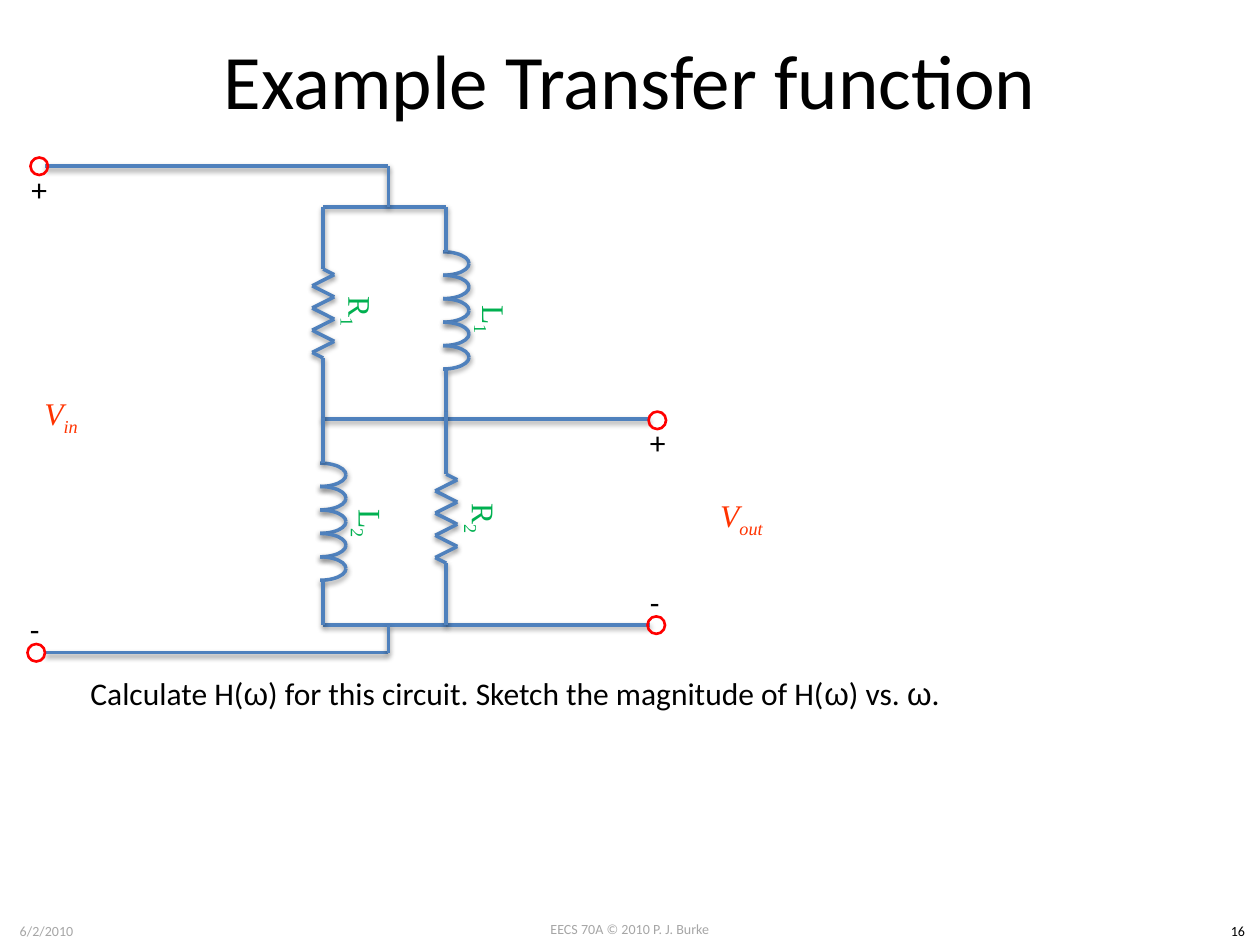
from itertools import pairwise

from lxml.etree import SubElement
from pptx import Presentation
from pptx.dml.color import RGBColor
from pptx.enum.shapes import MSO_CONNECTOR, MSO_SHAPE
from pptx.enum.text import MSO_ANCHOR, PP_ALIGN
from pptx.oxml.ns import qn
from pptx.util import Pt

WIRE, TERMINAL, VOLTAGE, PART = "4F81BD", "FF0000", "FF3300", "00B050"
BLACK, GRAY = "000000", "A6A6A6"
SANS, SERIF, GREEK = "Calibri", "Times New Roman", "Arial"


def rgb(color):
    return RGBColor.from_string(color)


def add_shadow(shape):
    effects = SubElement(shape._element.spPr, qn("a:effectLst"))
    shadow = SubElement(effects, qn("a:outerShdw"), blurRad=str(Pt(3.1)),
                        dist=str(Pt(1.6)), dir="5400000", rotWithShape="0")
    color = SubElement(shadow, qn("a:srgbClr"), val=BLACK)
    SubElement(color, qn("a:alpha"), val="38000")


class Circuit:
    """Draws circuit elements and text on one slide, in points."""

    def __init__(self, slide):
        self.s = slide

    def run(self, p, text, size, color, font=SANS):
        r = p.add_run()
        r.text = text
        r.font.name, r.font.size = font, Pt(size)
        r.font.color.rgb = rgb(color)
        return r

    def title(self, text, left, top, width, height):
        sp = self.s.shapes.title
        sp.left, sp.top, sp.width, sp.height = map(Pt, (left, top, width, height))
        tf = sp.text_frame
        tf.vertical_anchor = MSO_ANCHOR.MIDDLE
        p = tf.paragraphs[0]
        p.alignment = PP_ALIGN.CENTER
        self.run(p, text, 44, BLACK)

    def box(self, left, top, width, height, align=PP_ALIGN.LEFT, wrap=True):
        sp = self.s.shapes.add_textbox(*map(Pt, (left, top, width, height)))
        tf = sp.text_frame
        tf.word_wrap = wrap
        tf.paragraphs[0].alignment = align
        return sp, tf.paragraphs[0]

    def footer(self, text, left, top, width, color=GRAY):
        sp, p = self.box(left, top, width, 17, PP_ALIGN.CENTER)
        self.run(p, text, 8, color)

    def sign(self, text, left, top, width):
        sp, p = self.box(left, top, width, 29, wrap=False)
        self.run(p, text, 18, BLACK)

    def symbol(self, name, index, left, top, width, height, color):
        """A letter with a subscript, centred in its box."""
        sp, p = self.box(left, top, width, height, PP_ALIGN.CENTER)
        sp.text_frame.vertical_anchor = MSO_ANCHOR.MIDDLE
        runs = [self.run(p, text, 18, color, SERIF) for text in (name, index)]
        runs[1].font._element.set("baseline", "-25000")
        return sp, runs

    def voltage(self, index, left, top):
        sp, runs = self.symbol("V", index, left, top, 55.4, 44, VOLTAGE)
        for r in runs:
            r.font.italic = True

    def part_label(self, name, index, left, top):
        sp, runs = self.symbol(name, index, left, top, 85.7, 52.6, PART)
        sp.rotation = 90

    def wire(self, start, end, shapes=None):
        shapes = shapes or self.s.shapes
        line = shapes.add_connector(MSO_CONNECTOR.STRAIGHT,
                                    *map(Pt, (*start, *end)))
        line.line.color.rgb = rgb(WIRE)
        line.line.width = Pt(2)
        add_shadow(line)

    def terminal(self, left, top):
        sp = self.s.shapes.add_shape(MSO_SHAPE.OVAL, *map(Pt, (left, top, 10, 10)))
        sp.fill.background()
        sp.line.color.rgb = rgb(TERMINAL)
        sp.line.width = Pt(1.5)
        sp.shadow.inherit = False

    def resistor(self, x, top):
        """Vertical zigzag between two leads of equal length."""
        shapes = self.s.shapes.add_group_shape().shapes
        lead, half, step = 35.5, 6.3, 6.35
        start = top + lead
        end = start + 8 * step
        teeth = [(x + half * (-1) ** i, start + step * (i + 0.5)) for i in range(8)]
        points = [(x, top), (x, start), *teeth, (x, end), (x, end + lead)]
        for a, b in pairwise(points):
            self.wire(a, b, shapes)

    def inductor(self, x, top):
        """Vertical coil of half-ellipses between two leads of equal length."""
        shapes = self.s.shapes.add_group_shape().shapes
        lead, pitch, turns = 25.6, 13.4, 5
        start = top + lead
        end = start + turns * pitch
        self.wire((x, top), (x, start), shapes)
        for i in range(turns):
            for flipped in (False, True):
                arc = shapes.add_shape(MSO_SHAPE.ARC, *map(
                    Pt, (x - 16.5, start + i * pitch, 29.5, pitch)))
                if flipped:
                    arc._element.spPr.xfrm.set("flipV", "1")
                arc.fill.background()
                arc.line.color.rgb = rgb(WIRE)
                arc.line.width = Pt(2)
                add_shadow(arc)
        self.wire((x, end), (x, end + lead), shapes)


def main():
    prs = Presentation()
    prs.slide_width, prs.slide_height = Pt(720), Pt(540)
    c = Circuit(prs.slides.add_slide(prs.slide_layouts[5]))

    c.footer("EECS 70A © 2010 P. J. Burke", 276, 522.7, 168)
    c.footer("6/2/2010", 0, 523.4, 53.3)
    c.footer("16", 694.8, 523.4, 25.2, BLACK)
    c.title("Example Transfer function", 36, 0, 648, 90)

    sp, p = c.box(44.6, 381.6, 578, 29)
    for text, font in (("Calculate H(", SANS), ("ω", GREEK),
                       (") for this circuit. Sketch the magnitude of H(", SANS),
                       ("ω", GREEK), (") vs. ", SANS), ("ω", GREEK), (".", SANS)):
        c.run(p, text, 18, BLACK, font)

    left, middle, right = 184.7, 222, 255
    input_top, top, center, bottom, input_bottom = 95, 118.3, 239.5, 357, 373
    input_x, output_x = 26, 371.5

    for start, end in (
        ((middle, input_top), (input_x, input_top)),
        ((middle, input_bottom), (input_x, input_bottom)),
        ((right, center), (output_x, center)),
        ((right, bottom), (output_x, bottom)),
        ((left, top), (right, top)),
        ((left, center), (right, center)),
        ((left, bottom), (right, bottom)),
        ((middle, top), (middle, input_top)),
        ((middle, bottom), (middle, input_bottom)),
    ):
        c.wire(start, end)

    c.resistor(left, top)
    c.inductor(right, top)
    c.inductor(left, center - 0.5)
    c.resistor(right, center - 4)

    for x, y in ((17.4, 90), (15.7, 368), (370.6, 235.2), (370, 352.2)):
        c.terminal(x, y)
    for text, x, y, width in (("+", 10.8, 93.6, 23.8), ("-", 10, 345, 20.2),
                              ("+", 364.3, 238.3, 23.8), ("-", 364.3, 329.8, 20.2)):
        c.sign(text, x, y, width)

    c.voltage("in", 7.2, 215.3)
    c.voltage("out", 396, 273.8)
    for name, index, x, y in (("R", "1", 162, 152), ("L", "1", 238.3, 156.2),
                              ("R", "2", 232.5, 270), ("L", "2", 167.8, 273)):
        c.part_label(name, index, x, y)

    prs.save("out.pptx")


if __name__ == "__main__":
    main()
